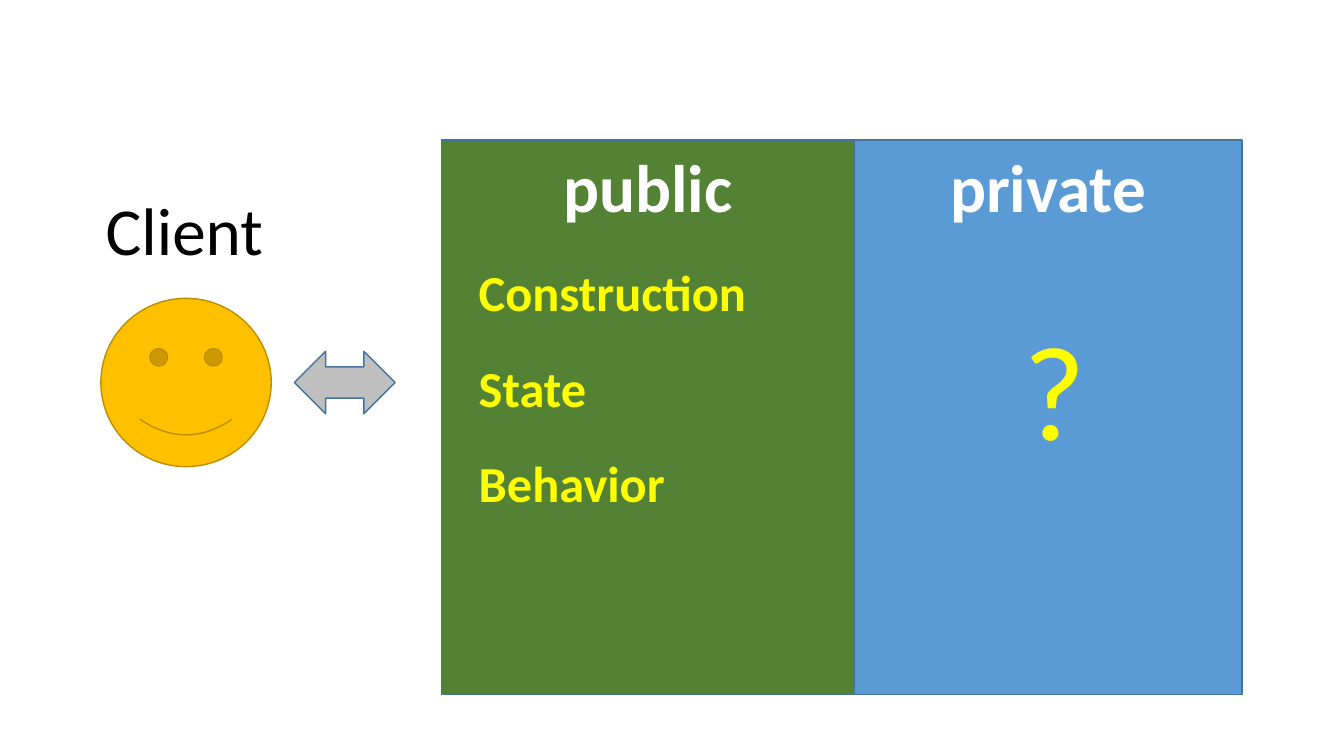
from pptx import Presentation
from pptx.dml.color import RGBColor
from pptx.enum.shapes import MSO_SHAPE
from pptx.enum.text import MSO_ANCHOR, PP_ALIGN
from pptx.util import Inches, Pt

COLORS = {
    "public": "548235",
    "private": "5B9BD5",
    "outline": "43739E",
    "face": "FFC000",
    "face_outline": "BD8E00",
    "arrow": "BFBFBF",
    "heading": "FFFFFF",
    "member": "FFFF00",
    "client": "000000",
}
FONT = "Calibri"
MEMBERS = ("Construction", "State", "Behavior")
MEMBER_PITCH = 0.95


def color(name):
    return RGBColor.from_string(COLORS[name])


def write(frame, wording, size, tint, bold=False, align=PP_ALIGN.LEFT):
    frame.word_wrap = True
    frame.vertical_anchor = MSO_ANCHOR.TOP
    paragraph = frame.paragraphs[0]
    paragraph.alignment = align
    run = paragraph.add_run()
    run.text = wording
    run.font.name = FONT
    run.font.size = Pt(size)
    run.font.bold = bold
    run.font.color.rgb = color(tint)


def add_label(slide, box, wording, size, tint, bold=False):
    label = slide.shapes.add_textbox(*map(Inches, box))
    write(label.text_frame, wording, size, tint, bold)


def add_figure(slide, kind, box, fill, outline="outline"):
    figure = slide.shapes.add_shape(kind, *map(Inches, box))
    figure.shadow.inherit = False
    figure.fill.solid()
    figure.fill.fore_color.rgb = color(fill)
    figure.line.color.rgb = color(outline)
    figure.line.width = Pt(1)
    return figure


def add_section(slide, box, access):
    section = add_figure(slide, MSO_SHAPE.RECTANGLE, box, access)
    write(section.text_frame, access, 48, "heading", True, PP_ALIGN.CENTER)


def add_public(slide, box):
    left, top, width, height = box
    add_section(slide, box, "public")
    for row, member in enumerate(MEMBERS):
        place = (left + 0.27, top + 1.15 + row * MEMBER_PITCH, 3.2, 0.71)
        add_label(slide, place, member, 36, "member", True)


def add_private(slide, box):
    left, top, width, height = box
    add_section(slide, box, "private")
    add_label(slide, (left + 1.58, top + 1.6, 1.56, 1.72), "?", 96, "member")


def add_client(slide, box):
    left, top, width, height = box
    face_top = top + 1.14
    face_height = height - 1.14
    arrow_height = 0.62
    arrow_top = face_top + (face_height - arrow_height) / 2
    add_label(slide, (left - 0.05, top, 1.9, 0.91), "Client", 48, "client")
    add_figure(slide, MSO_SHAPE.SMILEY_FACE,
               (left, face_top, 1.69, face_height), "face", "face_outline")
    add_figure(slide, MSO_SHAPE.LEFT_RIGHT_ARROW,
               (left + width - 1, arrow_top, 1, arrow_height), "arrow")


def main():
    deck = Presentation()
    deck.slide_width = Inches(13.33)
    deck.slide_height = Inches(7.5)
    slide = deck.slides.add_slide(deck.slide_layouts[6])
    add_public(slide, (4.38, 1.39, 4.09, 5.5))
    add_private(slide, (8.47, 1.39, 3.85, 5.5))
    add_client(slide, (1, 1.82, 2.92, 2.81))
    deck.save("out.pptx")


if __name__ == "__main__":
    main()
